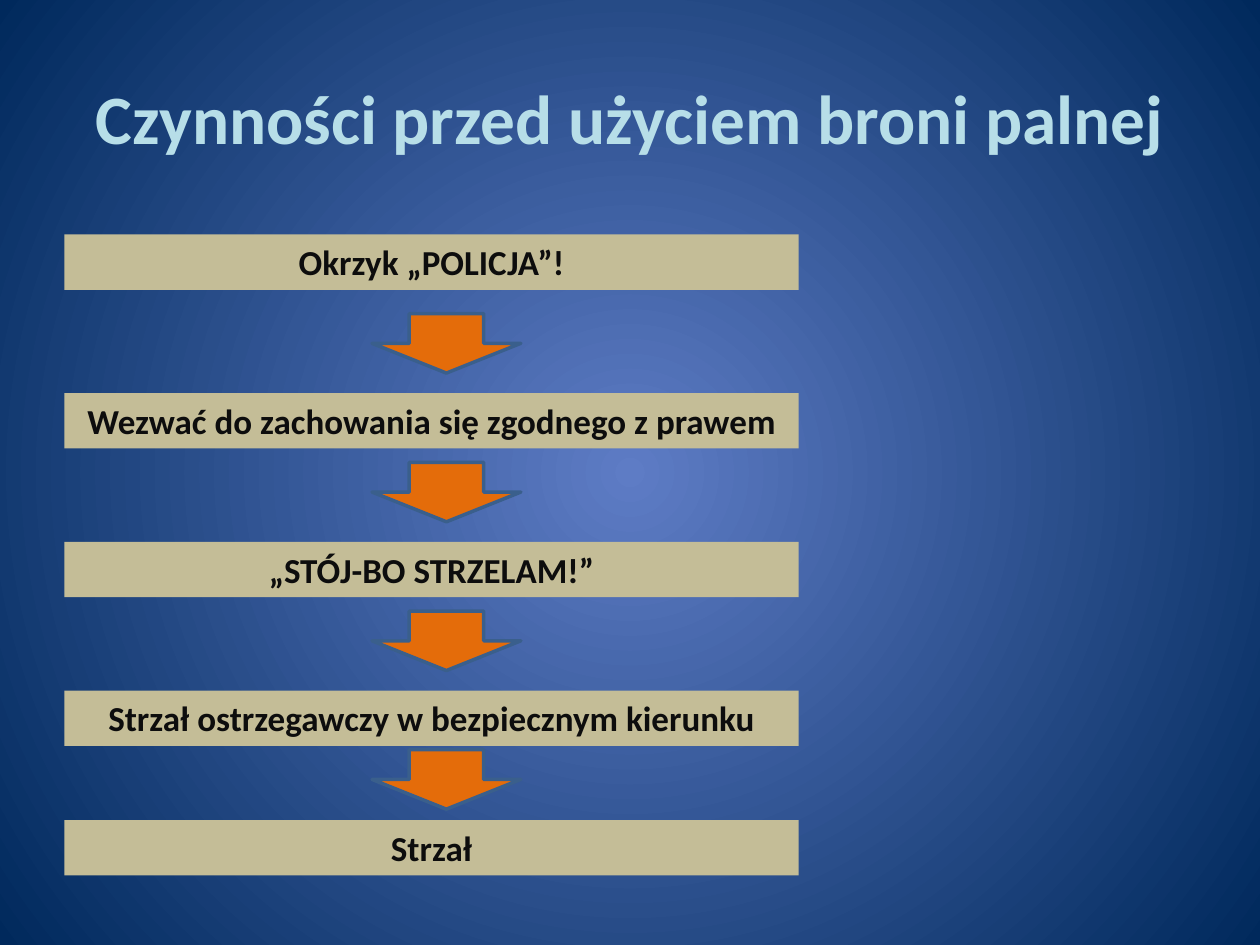
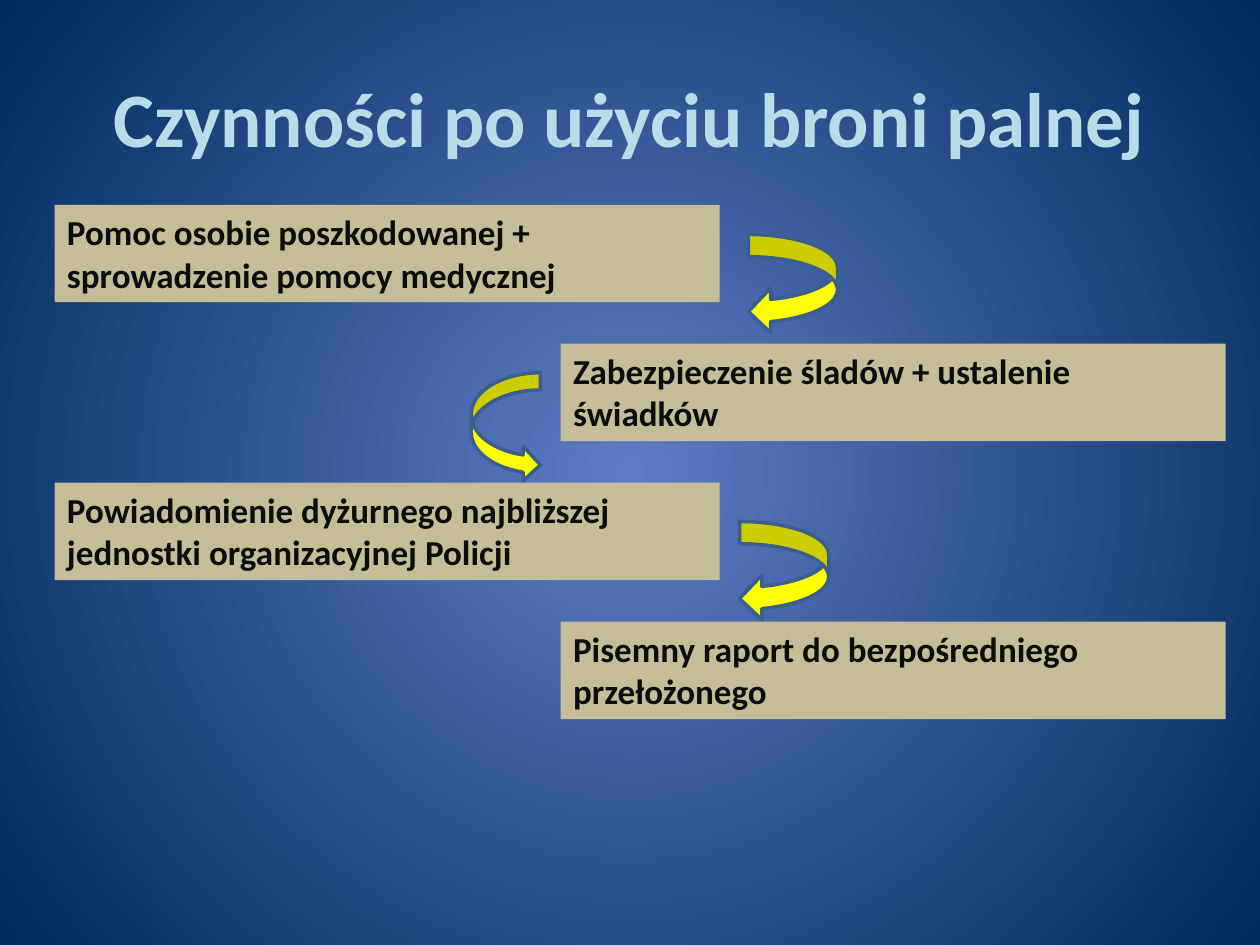
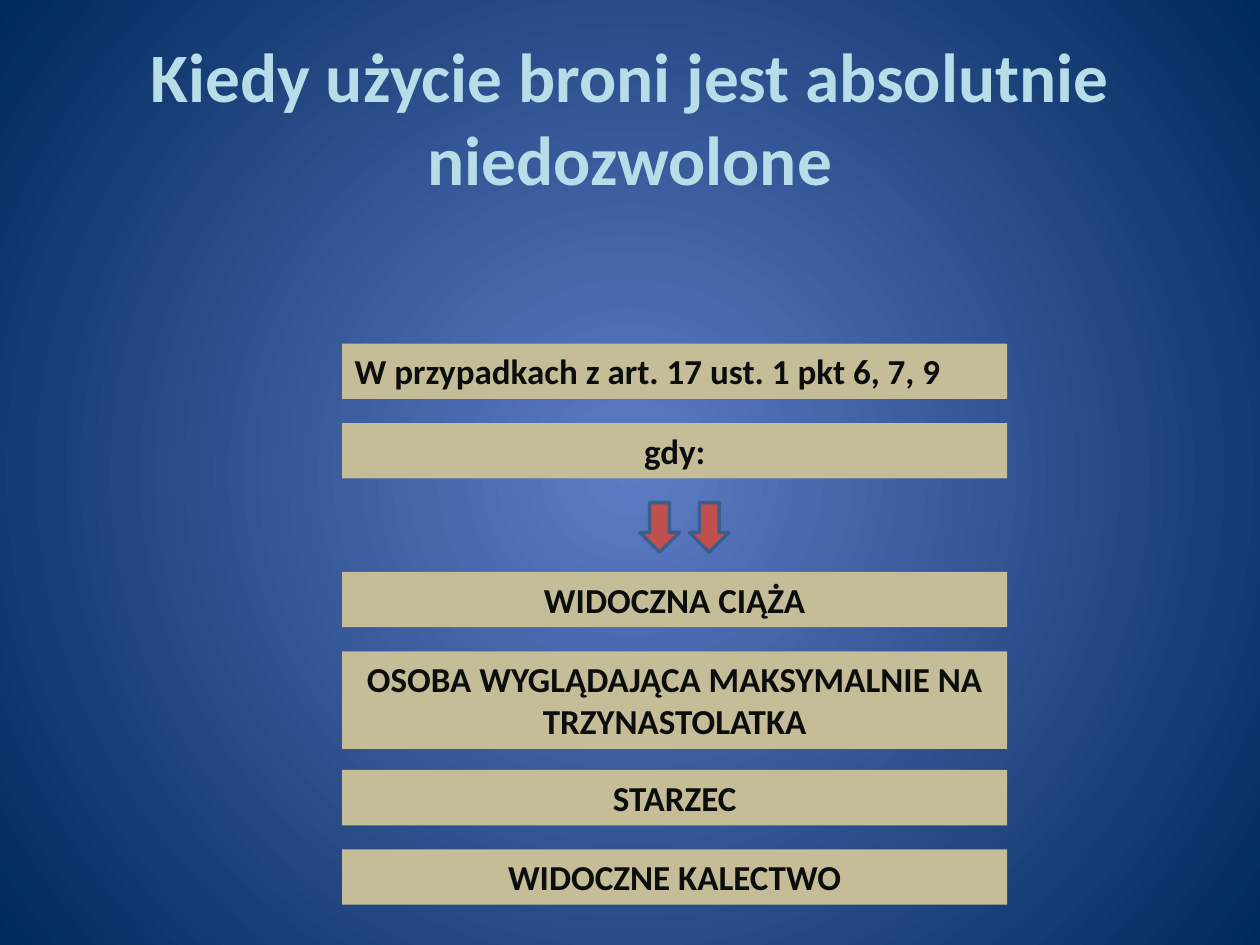
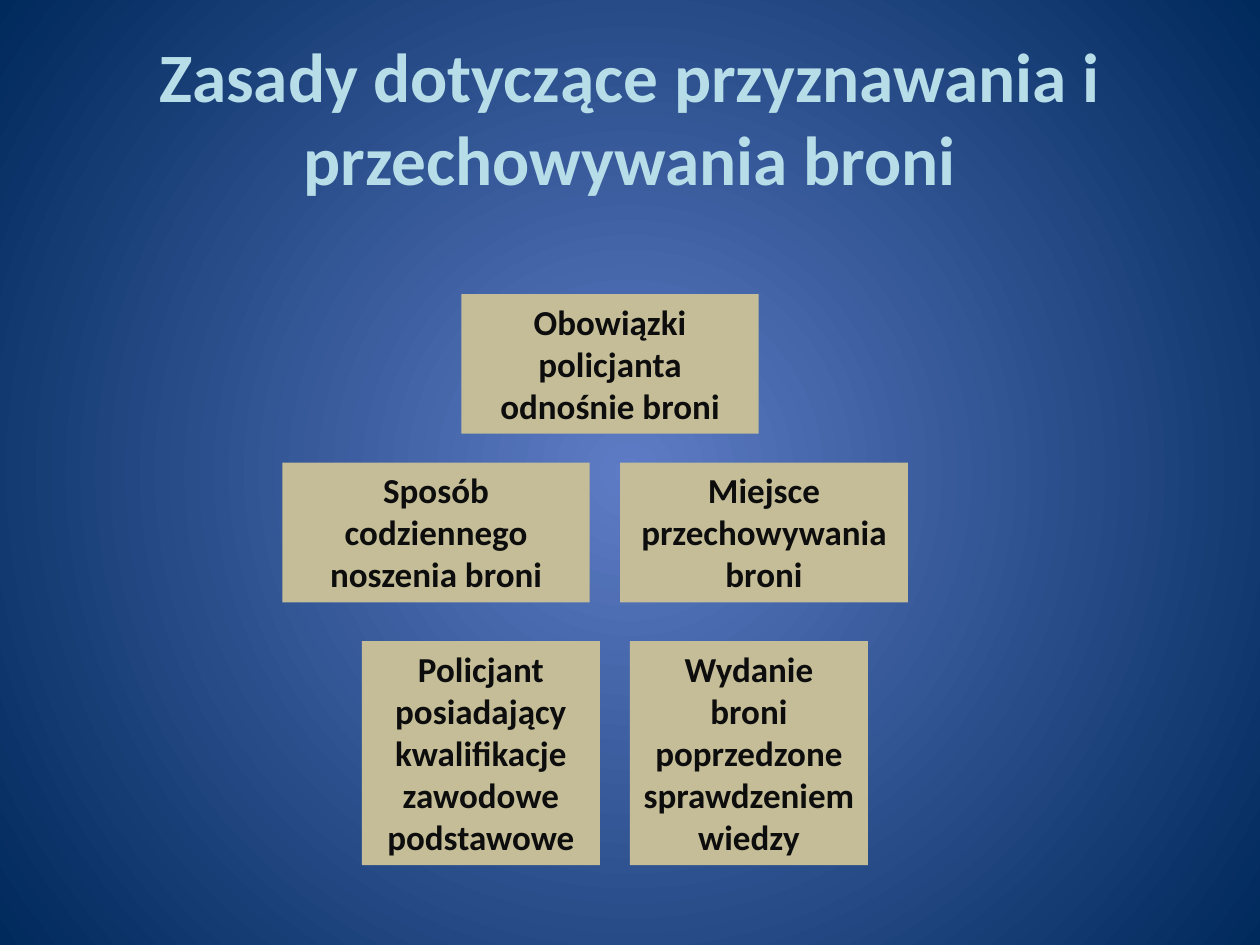
import pptx
import pptx.util
import pptx.dml.color
import pptx.enum.shapes
import pptx.enum.text
import pptx.oxml.ns
import lxml.etree

Pt = pptx.util.Pt
RGB = pptx.dml.color.RGBColor
SHAPE = pptx.enum.shapes.MSO_SHAPE
ALIGN = pptx.enum.text.PP_ALIGN
ANCHOR = pptx.enum.text.MSO_ANCHOR
FIT = pptx.enum.text.MSO_AUTO_SIZE
qn = pptx.oxml.ns.qn

GLOW = RGB(0x5E, 0x7C, 0xC5)
NAVY = RGB(0x00, 0x29, 0x5C)
SKY = RGB(0xB7, 0xDE, 0xE8)
SAND = RGB(0xC4, 0xBD, 0x97)
INK = RGB(0x0D, 0x0D, 0x0D)
EDGE = RGB(0x3A, 0x5F, 0x8C)
ORANGE = RGB(0xE4, 0x6C, 0x0A)
YELLOW = RGB(0xFF, 0xFF, 0x00)
RED = RGB(0xC0, 0x50, 0x4D)
FONT = "Calibri"
LINE, PAD = 24.1, 7.5

BEFORE = [
    ("Okrzyk „POLICJA”!", 134),
    ("Wezwać do zachowania się zgodnego z prawem", 224.6),
    ("„STÓJ-BO STRZELAM!”", 309.6),
    ("Strzał ostrzegawczy w bezpiecznym kierunku", 394.6),
    ("Strzał", 468.6),
]
DROPS = [179.2, 264.2, 349.2, 428.4]

AFTER = [
    "Pomoc osobie poszkodowanej + sprowadzenie pomocy medycznej",
    "Zabezpieczenie śladów + ustalenie świadków",
    "Powiadomienie dyżurnego najbliższej jednostki organizacyjnej Policji",
    "Pisemny raport do bezpośredniego przełożonego",
]
CURVES = [
    (SHAPE.CURVED_LEFT_ARROW, 427.6, 134, 51, 56.8),
    (SHAPE.CURVED_RIGHT_ARROW, 269.2, 213, 39.6, 62.6),
    (SHAPE.CURVED_LEFT_ARROW, 422.6, 298, 51, 56.8),
]

BANNED = [
    ("W przypadkach z art. 17 ust. 1 pkt 6, 7, 9", 196.4, 1, ALIGN.LEFT),
    ("gdy:", 241.8, 1, ALIGN.CENTER),
    ("WIDOCZNA CIĄŻA", 326.8, 1, ALIGN.CENTER),
    ("OSOBA WYGLĄDAJĄCA MAKSYMALNIE NA TRZYNASTOLATKA", 372.2, 2, ALIGN.CENTER),
    ("STARZEC", 440, 1, ALIGN.CENTER),
    ("WIDOCZNE KALECTWO", 485.4, 1, ALIGN.CENTER),
]

RULES = [
    ("Obowiązki policjanta odnośnie broni", 263.6, 168, 170, 3),
    ("Sposób codziennego noszenia broni", 161.4, 264.4, 175.6, 3),
    ("Miejsce przechowywania broni", 354.4, 264.4, 164.4, 3),
    ("Policjant posiadający kwalifikacje zawodowe podstawowe", 206.8, 366.4, 136, 5),
    ("Wydanie broni poprzedzone sprawdzeniem wiedzy", 360, 366.4, 136, 5),
]


def backdrop(deck):
    fill = deck.slide_master.background.fill
    fill.gradient()
    for stop, tone in zip(fill.gradient_stops, (GLOW, NAVY)):
        stop.color.rgb = tone
    grad = deck.slide_master.element.find(".//" + qn("p:bgPr") + "/" + qn("a:gradFill"))
    grad.remove(grad.find(qn("a:lin")))
    path = lxml.etree.SubElement(grad, qn("a:path"), path="circle")
    sides = dict.fromkeys("ltrb", "50000")
    lxml.etree.SubElement(path, qn("a:fillToRect"), sides)


def write(shape, text, size, tone, align):
    frame = shape.text_frame
    frame.word_wrap = True
    para = frame.paragraphs[0]
    para.text = text
    para.alignment = align
    font = para.font
    font.name, font.size, font.bold = FONT, Pt(size), True
    font.color.rgb = tone
    return frame


def page(deck, title, size=39.6):
    slide = deck.slides.add_slide(deck.slide_layouts[6])
    head = slide.shapes.add_textbox(Pt(36), Pt(21.6), Pt(648), Pt(90))
    frame = write(head, title, size, SKY, ALIGN.CENTER)
    frame.vertical_anchor = ANCHOR.MIDDLE
    return slide


def solid(slide, kind, left, top, width, height, tone):
    shape = slide.shapes.add_shape(kind, Pt(left), Pt(top), Pt(width), Pt(height))
    shape.shadow.inherit = False
    shape.fill.solid()
    shape.fill.fore_color.rgb = tone
    return shape


def box(slide, text, left, top, width, lines=1, align=ALIGN.CENTER):
    shape = solid(slide, SHAPE.RECTANGLE, left, top, width, PAD + LINE * lines, SAND)
    shape.line.fill.background()
    frame = write(shape, text, 20, INK, align)
    frame.vertical_anchor = ANCHOR.TOP
    frame.auto_size = FIT.SHAPE_TO_FIT_TEXT


def arrow(slide, kind, left, top, width, height, tone):
    shape = solid(slide, kind, left, top, width, height, tone)
    shape.line.color.rgb = EDGE
    shape.line.width = Pt(2)


def main():
    deck = pptx.Presentation()
    deck.slide_width, deck.slide_height = Pt(720), Pt(540)
    backdrop(deck)

    slide = page(deck, "Czynności przed użyciem broni palnej")
    for text, top in BEFORE:
        box(slide, text, 36.8, top, 419.6)
    for top in DROPS:
        arrow(slide, SHAPE.DOWN_ARROW, 212.6, top, 85, 34, ORANGE)

    slide = page(deck, "Czynności po użyciu broni palnej", 44)
    for i, text in enumerate(AFTER):
        box(slide, text, (31.2, 320.4)[i % 2], 117 + 79.4 * i, 380, 2, ALIGN.LEFT)
    for curve in CURVES:
        arrow(slide, *curve, YELLOW)

    slide = page(deck, "Kiedy użycie broni jest absolutnie niedozwolone")
    for text, top, lines, align in BANNED:
        box(slide, text, 195.6, top, 380, lines, align)
    for left in (365.6, 394):
        arrow(slide, SHAPE.DOWN_ARROW, left, 287.2, 22.6, 28.4, RED)

    slide = page(deck, "Zasady dotyczące przyznawania i przechowywania broni")
    for rule in RULES:
        box(slide, *rule)

    deck.save("out.pptx")


if __name__ == "__main__":
    main()
